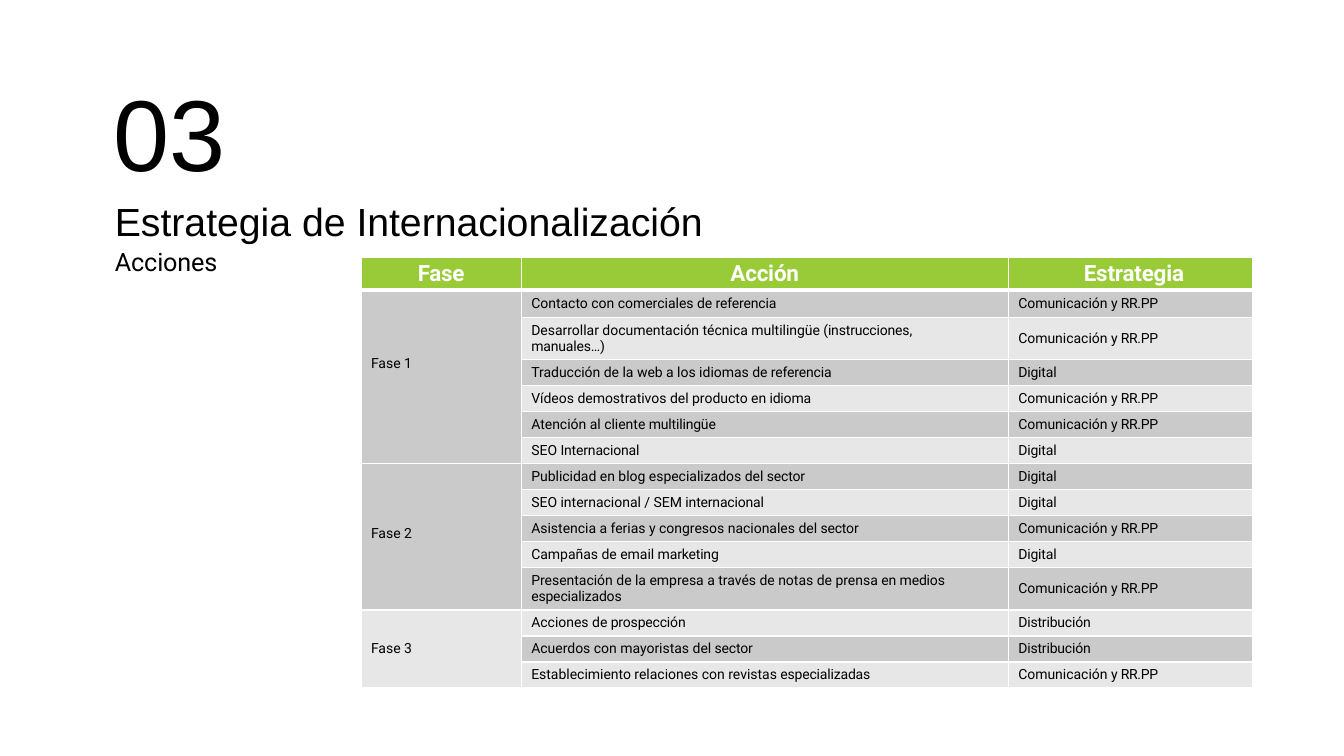
from dataclasses import dataclass

from lxml.etree import SubElement
from pptx import Presentation
from pptx.dml.color import RGBColor as Color
from pptx.enum.text import MSO_ANCHOR as Anchor, PP_ALIGN as Align
from pptx.oxml.ns import qn
from pptx.util import Inches, Pt


@dataclass(frozen=True)
class Theme:
    ink: str = "000000"
    paper: str = "FFFFFF"
    header: str = "99CB38"
    bands: tuple = ("CACACA", "E7E7E7")
    title_font: str = "Arial"
    body_font: str = "Roboto"
    number_size: int = 72
    title_size: int = 28
    subtitle_size: int = 18
    header_size: int = 16
    cell_size: int = 10


THEME = Theme()

NUMBER = [("03", -0.2)]
TITLE = [("Estrategia de Internacionalización", 0)]
SUBTITLE = [("Acciones", -0.1)]
HEADERS = [[("Fase", -0.2)], [("Acción", -0.1)], [("Estrategia", -0.1)]]

PRESS = [("Comunicación y", 0), (" RR.PP", -0.2)]
DIGITAL = [("Digital", -0.1)]
DISTRIBUTION = [("Distribución", -0.1)]

PHASES = [
    ("1", 0.27, [
        ("Contacto con comerciales de ", "referencia", PRESS),
        ("Desarrollar documentación técnica multilingüe ",
         "(instrucciones, manuales…)", PRESS),
        ("Traducción de la web a los idiomas de ", "referencia", DIGITAL),
        ("Vídeos demostrativos del producto en", " idioma", PRESS),
        ("Atención al cliente ", "multilingüe", PRESS),
        ("SEO ", "Internacional", DIGITAL),
    ]),
    ("2", 0.06, [
        ("Publicidad en blog especializados del ", "sector", DIGITAL),
        ("SEO internacional / SEM ", "internacional", DIGITAL),
        ("Asistencia a ferias y congresos nacionales del ", "sector", PRESS),
        ("Campañas de email ", "marketing", DIGITAL),
        ("Presentación de la empresa a través de notas de prensa en ",
         "medios especializados", PRESS),
    ]),
    ("3", 0, [
        ("Acciones de ", "prospección", DISTRIBUTION),
        ("Acuerdos con mayoristas del ", "sector", DISTRIBUTION),
        ("Establecimiento relaciones con revistas ", "especializadas", PRESS),
    ]),
]

TABLE_LEFT, TABLE_TOP, TABLE_HEIGHT = 3.58, 2.55, 4.28
COLUMNS = (1.59, 4.83, 2.42)
FIXED_ROWS = {0: 0.33, 1: 0.27, 2: 0.42, 11: 0.42}
CELL_INDENT, HEADER_INDENT, ACTION_RIGHT = 0.1, 0.75, 0.3


def write(paragraph, runs, font_name, size, color, bold=False):
    for text, tracking in runs:
        run = paragraph.add_run()
        run.text = text
        run.font.name = font_name
        run.font.size = Pt(size)
        run.font.bold = bold
        run.font.color.rgb = Color.from_string(color)
        if tracking:
            run.font._element.set("spc", str(round(tracking * 100)))


def add_text(slide, box, top_inset, lines):
    frame = slide.shapes.add_textbox(*map(Inches, box)).text_frame
    frame.word_wrap = True
    frame.margin_left, frame.margin_top = Inches(0.01), Inches(top_inset)
    frame.margin_right = frame.margin_bottom = 0
    for index, (runs, font_name, size) in enumerate(lines):
        paragraph = frame.add_paragraph() if index else frame.paragraphs[0]
        if index:
            paragraph.space_before = Pt(0.9)
        write(paragraph, runs, font_name, size, THEME.ink)


def style_cell(cell, fill, top_width=1, bottom_width=1):
    properties = cell._tc.get_or_add_tcPr()
    widths = {"lnL": 1, "lnR": 1, "lnT": top_width, "lnB": bottom_width}
    for side, width in widths.items():
        line = SubElement(properties, qn(f"a:{side}"), w=str(Pt(width)))
        solid = SubElement(line, qn("a:solidFill"))
        SubElement(solid, qn("a:srgbClr"), val=THEME.paper)
    cell.fill.solid()
    cell.fill.fore_color.rgb = Color.from_string(fill)
    cell.vertical_anchor = Anchor.MIDDLE
    cell.margin_left = cell.margin_right = 0
    cell.margin_top = cell.margin_bottom = 0


def fill_header(table):
    for column, runs in enumerate(HEADERS):
        cell = table.cell(0, column)
        style_cell(cell, THEME.header, bottom_width=3)
        paragraph = cell.text_frame.paragraphs[0]
        if column < 2:
            paragraph.alignment = Align.CENTER
        else:
            cell.margin_left = Inches(HEADER_INDENT)
        write(paragraph, runs, THEME.body_font, THEME.header_size, THEME.paper, True)


def fill_body(table):
    row = 1
    for number, lift, actions in PHASES:
        phase_row = row
        for start, ending, strategy in actions:
            phase = [("Fase ", 0), (number, -0.5)] if row == phase_row else []
            contents = (phase, [(start, 0), (ending, -0.1)], strategy)
            for column, runs in enumerate(contents):
                cell = table.cell(row, column)
                band = phase_row if column == 0 else row
                style_cell(cell, THEME.bands[(band - 1) % 2], 3 if row == 1 else 1)
                cell.margin_left = Inches(CELL_INDENT)
                if column == 1:
                    cell.margin_right = Inches(ACTION_RIGHT)
                write(cell.text_frame.paragraphs[0], runs,
                      THEME.body_font, THEME.cell_size, THEME.ink)
            row += 1
        phase_cell = table.cell(phase_row, 0)
        phase_cell.margin_bottom = Inches(lift)
        phase_cell.merge(table.cell(row - 1, 0))


def add_plan(slide):
    row_count = 1 + sum(len(actions) for _, _, actions in PHASES)
    plain_height = (TABLE_HEIGHT - sum(FIXED_ROWS.values())) / (row_count - len(FIXED_ROWS))
    box = (TABLE_LEFT, TABLE_TOP, sum(COLUMNS), TABLE_HEIGHT)
    table = slide.shapes.add_table(row_count, len(COLUMNS), *map(Inches, box)).table
    for column, width in zip(table.columns, COLUMNS):
        column.width = Inches(width)
    for index, row in enumerate(table.rows):
        row.height = Inches(FIXED_ROWS.get(index, plain_height))
    fill_header(table)
    fill_body(table)


def main():
    presentation = Presentation()
    presentation.slide_width, presentation.slide_height = Inches(13.33), Inches(7.5)
    slide = presentation.slides.add_slide(presentation.slide_layouts[6])
    add_text(slide, (1.12, 0.6, 1.63, 1.23), 0.1,
             [(NUMBER, THEME.title_font, THEME.number_size)])
    add_text(slide, (1.13, 1.91, 5.96, 1.29), 0.05,
             [(TITLE, THEME.title_font, THEME.title_size),
              (SUBTITLE, THEME.body_font, THEME.subtitle_size)])
    add_plan(slide)
    presentation.save("out.pptx")


if __name__ == "__main__":
    main()
